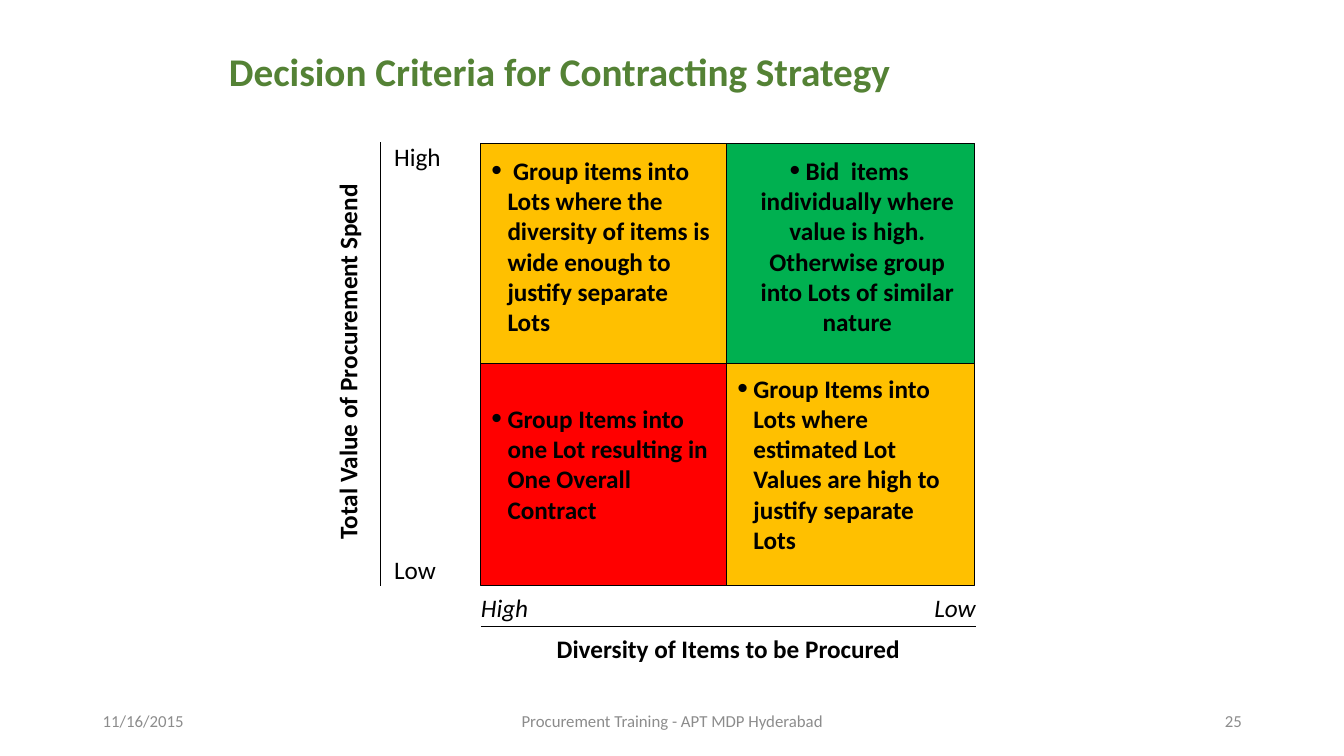
import pptx
import pptx.util
import pptx.dml.color
import pptx.enum.shapes
import pptx.enum.text
import lxml.etree

RGBColor = pptx.dml.color.RGBColor
ALIGN = pptx.enum.text.PP_ALIGN
ANCHOR = pptx.enum.text.MSO_ANCHOR
BLACK = RGBColor(0x00, 0x00, 0x00)
GRAY = RGBColor(0x8C, 0x8C, 0x8C)
LEAF = RGBColor(0x54, 0x82, 0x35)
AMBER = RGBColor(0xFF, 0xC0, 0x00)
GREEN = RGBColor(0x00, 0xB0, 0x50)
RED = RGBColor(0xFF, 0x00, 0x00)

MATRIX_LEFT, MATRIX_TOP = 35.78, 18.93
COLUMN, ROW = 18.3, 29.2
MATRIX_WIDTH = 36.82
LABEL_HEIGHT = 4
AXIS_LEFT, AXIS_TOP, AXIS_BOTTOM = 28.28, 18.8, 77.47
DIVERSITY_AXIS = 82.93
FOOTER_TOP, FOOTER_HEIGHT = 92.67, 5.33

QUADRANTS = [
    (0, 0, AMBER, 1.6, ALIGN.LEFT,
     " Group items into Lots where the diversity of items is wide enough to justify separate Lots"),
    (1, 0, GREEN, 1.6, ALIGN.CENTER,
     "Bid  items individually where value is high. Otherwise group into Lots of similar nature"),
    (0, 1, RED, 5.2, ALIGN.LEFT,
     "Group Items into one Lot resulting in One Overall Contract"),
    (1, 1, AMBER, 1.2, ALIGN.LEFT,
     "Group Items into Lots where estimated Lot Values are high to justify separate Lots"),
]
LABELS = [
    ("High", 29.33, 18.67, 5.7, ALIGN.LEFT, {}),
    ("Low", 29.33, 73.33, 5.7, ALIGN.LEFT, {"anchor": ANCHOR.BOTTOM}),
    ("High", MATRIX_LEFT, 78.4, 15.7, ALIGN.LEFT, {"italic": True}),
    ("Low", 57.98, 78.4, 14.62, ALIGN.RIGHT, {"italic": True}),
    ("Total Value of Procurement Spend", 9.53, 45.87, 32.63, ALIGN.CENTER,
     {"bold": True, "anchor": ANCHOR.BOTTOM, "rotation": 270}),
    ("Diversity of Items to be Procured", MATRIX_LEFT, 83.73, MATRIX_WIDTH, ALIGN.CENTER,
     {"bold": True, "anchor": ANCHOR.BOTTOM}),
]
FOOTERS = [
    ("11/16/2015", 6.9, 22.5, ALIGN.LEFT),
    ("25", 70.65, 22.5, ALIGN.RIGHT),
    ("Procurement Training - APT MDP Hyderabad", 33.15, 33.75, ALIGN.CENTER),
]


class StrategyPage:
    """Draw styled elements on one slide, with lengths as percentages of its size."""

    face = "Calibri"
    stroke = pptx.util.Pt(0.75)

    def __init__(self, deck):
        self.deck = deck
        self.page = deck.slides.add_slide(deck.slide_layouts[5])

    def across(self, share):
        return round(self.deck.slide_width * share / 100)

    def down(self, share):
        return round(self.deck.slide_height * share / 100)

    def area(self, left, top, width, height):
        return self.across(left), self.down(top), self.across(width), self.down(height)

    def set_text(self, frame, words, size, color, align, bold=False, italic=False):
        frame.word_wrap = True
        para = frame.paragraphs[0]
        para.text = words
        para.alignment = align
        font = para.font
        font.name, font.size = self.face, pptx.util.Pt(size)
        font.bold, font.italic = bold, italic
        font.color.rgb = color
        return para

    def title(self, words, left, top, width, height):
        box = self.page.shapes.title
        box.left, box.top, box.width, box.height = self.area(left, top, width, height)
        para = self.set_text(box.text_frame, words, 28, LEAF, ALIGN.LEFT, bold=True)
        para.line_spacing = 0.9
        box.text_frame.vertical_anchor = ANCHOR.MIDDLE
        box.text_frame.auto_size = pptx.enum.text.MSO_AUTO_SIZE.NONE

    def tile(self, fill, left, top, width, height):
        box = self.page.shapes.add_shape(
            pptx.enum.shapes.MSO_SHAPE.RECTANGLE, *self.area(left, top, width, height))
        box.shadow.inherit = False
        box.fill.solid()
        box.fill.fore_color.rgb = fill
        box.line.color.rgb = BLACK
        box.line.width = self.stroke

    def line(self, left, top, right, bottom):
        rule = self.page.shapes.add_connector(
            pptx.enum.shapes.MSO_CONNECTOR.STRAIGHT, *self.area(left, top, right, bottom))
        rule.line.color.rgb = BLACK
        rule.line.width = self.stroke
        properties = rule._element.spPr
        lxml.etree.SubElement(properties, pptx.oxml.ns.qn("a:effectLst"))

    def label(self, words, left, top, width, height, align,
              anchor=ANCHOR.TOP, rotation=0, bold=False, italic=False):
        box = self.page.shapes.add_textbox(*self.area(left, top, width, height))
        box.rotation = rotation
        frame = box.text_frame
        frame.margin_left = frame.margin_top = frame.margin_right = frame.margin_bottom = 0
        frame.vertical_anchor = anchor
        return self.set_text(frame, words, 18, BLACK, align, bold, italic)

    def bullet(self, words, left, top, width, height, align):
        para = self.label(words, left, top, width, height, align, bold=True)
        indent = pptx.util.Inches(0.16)
        properties = para._p.get_or_add_pPr()
        properties.set("marL", str(indent))
        properties.set("indent", str(-indent))
        marks = [("a:buSzPct", "val", "120000"), ("a:buFont", "typeface", "Arial"),
                 ("a:buChar", "char", "•")]
        for position, (tag, key, value) in enumerate(marks):
            mark = lxml.etree.Element(pptx.oxml.ns.qn(tag))
            mark.set(key, value)
            properties.insert(position, mark)

    def footer(self, words, left, width, align):
        box = self.page.shapes.add_textbox(*self.area(left, FOOTER_TOP, width, FOOTER_HEIGHT))
        box.text_frame.vertical_anchor = ANCHOR.MIDDLE
        self.set_text(box.text_frame, words, 12, GRAY, align)


def main():
    deck = pptx.Presentation()
    deck.slide_width = pptx.util.Inches(13.33)
    deck.slide_height = pptx.util.Inches(7.5)
    page = StrategyPage(deck)
    page.title("Decision Criteria for Contracting Strategy", 16.28, 4, 67.5, 11.6)
    for column, row, fill, offset, align, words in QUADRANTS:
        left = MATRIX_LEFT + column * COLUMN
        top = MATRIX_TOP + row * ROW
        page.tile(fill, left, top, 18.45, 29.33)
        page.bullet(words, left + 0.78, top + offset, 16.65, 24.2, align)
    page.line(AXIS_LEFT, AXIS_TOP, AXIS_LEFT, AXIS_BOTTOM)
    page.line(MATRIX_LEFT, DIVERSITY_AXIS, MATRIX_LEFT + MATRIX_WIDTH, DIVERSITY_AXIS)
    for words, left, top, width, align, style in LABELS:
        page.label(words, left, top, width, LABEL_HEIGHT, align, **style)
    for words, left, width, align in FOOTERS:
        page.footer(words, left, width, align)
    deck.save("out.pptx")


if __name__ == "__main__":
    main()
